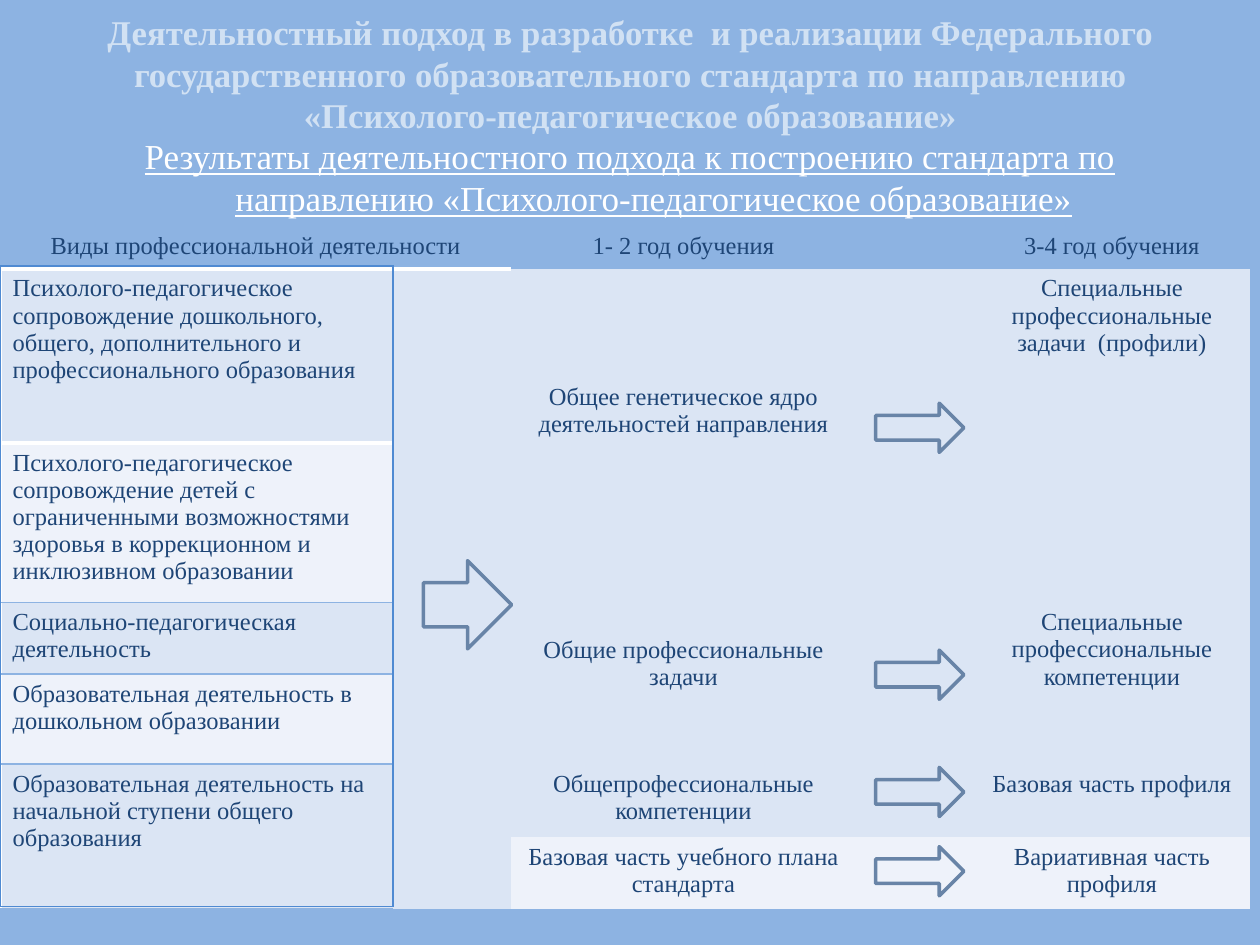
from pptx import Presentation
from pptx.dml.color import RGBColor
from pptx.enum.shapes import MSO_SHAPE
from pptx.enum.text import MSO_ANCHOR, MSO_AUTO_SIZE, PP_ALIGN
from pptx.oxml import parse_xml
from pptx.oxml.ns import nsdecls, qn
from pptx.util import Pt

SKY = RGBColor(0x8D, 0xB3, 0xE2)
PALE = RGBColor(0xDB, 0xE5, 0xF4)
PALER = RGBColor(0xEE, 0xF2, 0xFA)
WHITE = RGBColor(0xFF, 0xFF, 0xFF)
NAVY = RGBColor(0x1E, 0x45, 0x76)
TITLE_BLUE = RGBColor(0xD1, 0xE1, 0xF3)
FRAME_BLUE = RGBColor(0x4F, 0x8A, 0xD2)
ARROW_BLUE = RGBColor(0x68, 0x84, 0xA7)

FONT = "Times New Roman"
PLAIN_TABLE = "{2D5ABB26-0587-4C30-8999-92F81FD0307C}"
LEFT, CENTER = PP_ALIGN.LEFT, PP_ALIGN.CENTER


class SlideBuilder:
    def __init__(self, slide, background):
        self.slide = slide
        slide.background.fill.solid()
        slide.background.fill.fore_color.rgb = background

    def set_text(self, frame, text, size, color, align, bold=False, underline=False):
        frame.text = text
        paragraph = frame.paragraphs[0]
        paragraph.alignment = align
        for run in paragraph.runs:
            font = run.font
            font.name, font.size, font.color.rgb = FONT, Pt(size), color
            font.bold, font.underline = bold, underline
        return paragraph

    def title(self, text, left, top, width, height):
        title = self.slide.shapes.title
        title.left, title.top = Pt(left), Pt(top)
        title.width, title.height = Pt(width), Pt(height)
        frame = title.text_frame
        self.set_text(frame, text, 19.8, TITLE_BLUE, CENTER, bold=True)
        frame.auto_size = MSO_AUTO_SIZE.NONE
        frame.vertical_anchor = MSO_ANCHOR.MIDDLE

    def subtitle(self, text, left, top, width, height, hanging):
        box = self.slide.shapes.add_textbox(Pt(left), Pt(top), Pt(width), Pt(height))
        box.text_frame.word_wrap = True
        line = self.set_text(box.text_frame, text, 20, WHITE, CENTER, underline=True)
        properties = line._p.get_or_add_pPr()
        properties.set("marL", str(Pt(hanging)))
        properties.set("indent", str(-Pt(hanging)))

    def table(self, left, top, widths, heights):
        table = self.slide.shapes.add_table(
            len(heights), len(widths), Pt(left), Pt(top),
            Pt(sum(widths)), Pt(sum(heights))).table
        table.first_row = table.horz_banding = False
        table._tbl.tblPr.find(qn("a:tableStyleId")).text = PLAIN_TABLE
        for column, width in zip(table.columns, widths):
            column.width = Pt(width)
        for row, height in zip(table.rows, heights):
            row.height = Pt(height)
        # Empty cells must not stretch their rows
        for cell in table.iter_cells():
            end = cell.text_frame.paragraphs[0]._p.get_or_add_endParaRPr()
            end.set("sz", "1400")
        return table

    def cell(self, table, row, col, text, fill, rows=1, cols=1, align=CENTER, drop=0):
        cell = table.cell(row, col)
        if rows * cols > 1:
            cell.merge(table.cell(row + rows - 1, col + cols - 1))
        cell.fill.solid()
        cell.fill.fore_color.rgb = fill
        if text:
            self.set_text(cell.text_frame, text, 14, NAVY, align)
        cell.margin_top = Pt(3.6 + drop)
        return cell

    def borders(self, cell, **sides):
        properties = cell._tc.get_or_add_tcPr()
        present = [side for side in "LRTB" if side in sides]
        for position, side in enumerate(present):
            color, width = sides[side]
            line = parse_xml(f'<a:ln{side} {nsdecls("a")} w="{Pt(width)}">'
                             f'<a:solidFill><a:srgbClr val="{color}"/></a:solidFill>'
                             f'</a:ln{side}>')
            properties.insert(position, line)

    def arrow(self, left, top, width, height):
        arrow = self.slide.shapes.add_shape(
            MSO_SHAPE.RIGHT_ARROW, Pt(left), Pt(top), Pt(width), Pt(height))
        arrow.shadow.inherit = False
        arrow.fill.background()
        arrow.line.color.rgb = ARROW_BLUE
        arrow.line.width = Pt(2)


def main():
    deck = Presentation()
    deck.slide_width, deck.slide_height = Pt(720), Pt(540)
    builder = SlideBuilder(deck.slides.add_slide(deck.slide_layouts[5]), SKY)

    # Headings
    builder.title("Деятельностный подход в разработке  и реализации Федерального "
                  "государственного образовательного стандарта по направлению "
                  "«Психолого-педагогическое образование»", 36, 0, 648, 84)
    builder.subtitle("Результаты деятельностного подхода к построению стандарта по "
                     "направлению «Психолого-педагогическое образование»",
                     36, 73.5, 648, 54, hanging=27)

    # Table header
    plan = builder.table(0, 129.6, [224.6, 67.7, 196.6, 67.7, 157.7],
                         [22.3, 99.5, 84.6, 38.3, 51.4, 41.7, 37.7])
    builder.cell(plan, 0, 0, "Виды профессиональной деятельности", SKY, cols=2)
    for col, heading in enumerate(["1- 2 год обучения", "", "3-4 год обучения"], 2):
        builder.cell(plan, 0, col, heading, SKY)

    # Kinds of activity, with the line above and below each one
    activities = [
        "Психолого-педагогическое сопровождение дошкольного, общего, "
        "дополнительного и профессионального образования",
        "Психолого-педагогическое сопровождение детей с ограниченными "
        "возможностями здоровья в коррекционном и инклюзивном образовании",
        "Социально-педагогическая  деятельность",
        "Образовательная деятельность в дошкольном образовании",
        "Образовательная деятельность на начальной ступени общего образования",
    ]
    thick, thin = (WHITE, 3), (SKY, 1)
    rules = [thick, thick, thin, thin, thin, thin]
    for index, activity in enumerate(activities):
        last = index == len(activities) - 1
        cell = builder.cell(plan, index + 1, 0, activity, PALER if index % 2 else PALE,
                            rows=2 if last else 1, align=LEFT)
        builder.borders(cell, L=thick, T=rules[index], B=rules[index + 1])
    builder.cell(plan, 1, 1, "", PALE, rows=6)

    # Stages: first row, rows, fill, common part, its drop, special part
    stages = [
        (1, 2, PALE, "Общее генетическое ядро деятельностей направления", 62,
         "Специальные профессиональные задачи  (профили)"),
        (3, 2, PALE, "Общие профессиональные задачи", 15.6,
         "Специальные профессиональные компетенции"),
        (5, 1, PALE, "Общепрофессиональные компетенции", 0, "Базовая часть профиля"),
        (6, 1, PALER, "Базовая часть учебного плана стандарта", 0,
         "Вариативная часть профиля"),
    ]
    for row, rows, fill, common, drop, special in stages:
        builder.cell(plan, row, 2, common, fill, rows=rows, drop=drop)
        builder.cell(plan, row, 3, "", fill, rows=rows)
        builder.cell(plan, row, 4, special, fill, rows=rows)

    # Frame around the kinds of activity
    frame = builder.table(0, 152, [224.6], [365.8]).cell(0, 0)
    frame.fill.background()
    builder.borders(frame, **dict.fromkeys("LRTB", (FRAME_BLUE, 0.75)))

    # Arrows
    builder.arrow(242, 320.4, 50.4, 50.4)
    for top in (230.4, 371.5, 438.5, 483.8):
        builder.arrow(500.4, top, 50.4, 28.1)

    deck.save("out.pptx")


if __name__ == "__main__":
    main()
